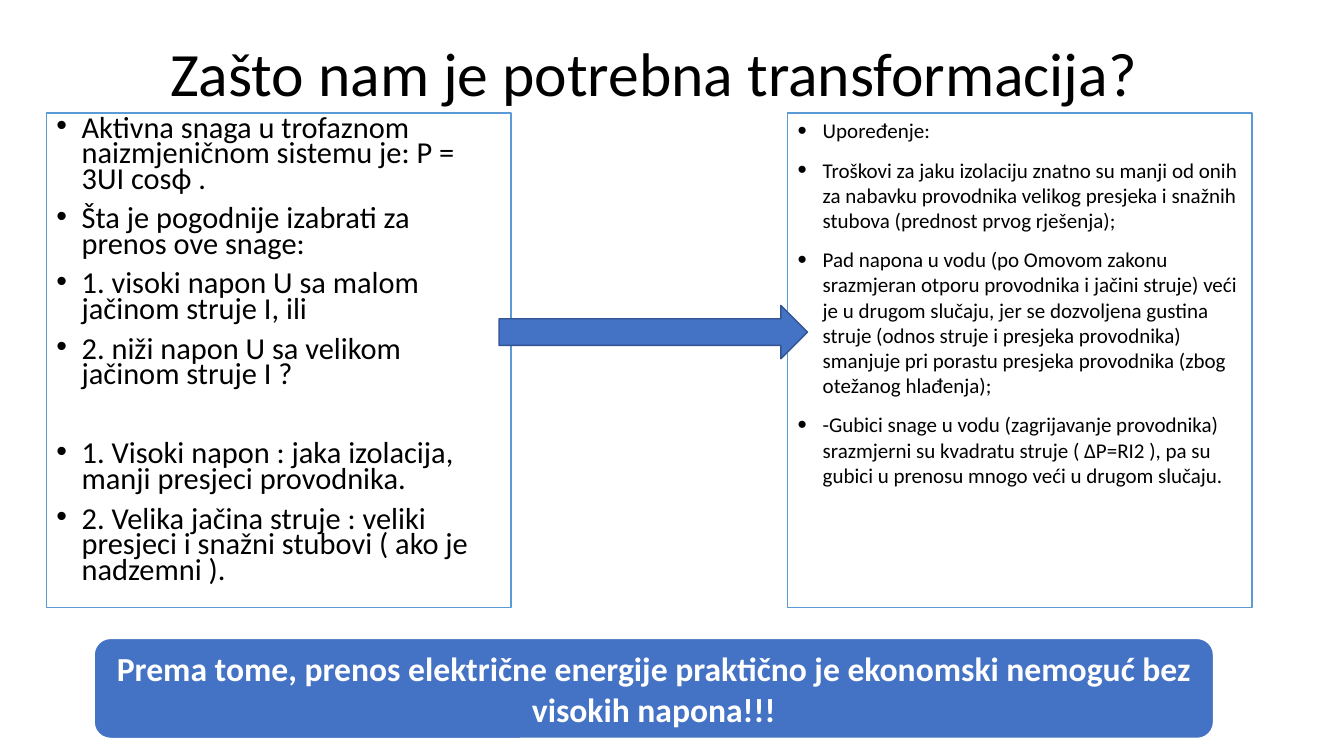
from lxml.etree import SubElement
from pptx import Presentation
from pptx.dml.color import RGBColor
from pptx.enum.shapes import MSO_SHAPE
from pptx.enum.text import MSO_ANCHOR, MSO_AUTO_SIZE, PP_ALIGN
from pptx.oxml.ns import qn
from pptx.util import Inches, Pt

# Content
TITLE = "Zašto nam je potrebna transformacija?"
QUESTIONS = [
    "Aktivna snaga u trofaznom naizmjeničnom sistemu je: P = 3UI cosϕ .",
    "Šta je pogodnije izabrati za prenos ove snage:",
    "1. visoki napon U sa malom jačinom struje I, ili",
    "2. niži napon U sa velikom jačinom struje I ?",
    "1. Visoki napon : jaka izolacija, manji presjeci provodnika.",
    "2. Velika jačina struje : veliki presjeci i snažni stubovi ( ako je nadzemni ).",
]
COMPARISON = [
    "Upoređenje:",
    "Troškovi za jaku izolaciju znatno su manji od onih za nabavku provodnika "
    "velikog presjeka i snažnih stubova (prednost prvog rješenja);",
    "Pad napona u vodu (po Omovom zakonu srazmjeran otporu provodnika i jačini struje) "
    "veći je u drugom slučaju, jer se dozvoljena gustina struje (odnos struje i presjeka "
    "provodnika) smanjuje pri porastu presjeka provodnika (zbog otežanog hlađenja);",
    "-Gubici snage u vodu (zagrijavanje provodnika) srazmjerni su kvadratu struje "
    "( ∆P=RI2 ), pa su gubici u prenosu mnogo veći u drugom slučaju.",
]
CONCLUSION = ("Prema tome, prenos električne energije praktično je ekonomski "
              "nemoguć bez visokih napona!!!")
ANSWERS_START = 4  # the answers stand apart from the questions
BLUE, DARK_BLUE, LIGHT_BLUE = "4472C4", "325491", "5B9BD5"
BLACK, WHITE = "000000", "FFFFFF"


def color(value):
    return RGBColor.from_string(value)


def place(shape, left, top, width, height):
    shape.left, shape.top = Inches(left), Inches(top)
    shape.width, shape.height = Inches(width), Inches(height)


def paint(shape, fill, line, weight):
    shape.fill.solid()
    shape.fill.fore_color.rgb = color(fill)
    shape.line.color.rgb = color(line)
    shape.line.width = Pt(weight)


def style(para, size, ink, bold=False):
    font = para.font
    font.name, font.size, font.bold = "Calibri", Pt(size), bold
    font.color.rgb = color(ink)


def add_bullet(para, percent):
    properties = para._p.get_or_add_pPr()
    properties.set("marL", str(Inches(0.25)))
    properties.set("indent", str(-Inches(0.25)))
    SubElement(properties, qn("a:buSzPct"), val=str(percent * 1000))
    SubElement(properties, qn("a:buFont"), typeface="Arial")
    SubElement(properties, qn("a:buChar"), char="•")


def fill_panel(panel, left, lines, size, spacing, percent, gaps):
    place(panel, left, 1.12, 4.61, 4.91)
    paint(panel, WHITE, LIGHT_BLUE, 1)
    frame = panel.text_frame
    frame.auto_size = MSO_AUTO_SIZE.NONE
    frame.vertical_anchor = MSO_ANCHOR.TOP
    for index, line in enumerate(lines):
        para = frame.paragraphs[0] if index == 0 else frame.add_paragraph()
        para.text = line
        add_bullet(para, percent)
        para.line_spacing = spacing
        para.space_before = Pt(gaps.get(index, 10))
        style(para, size, BLACK)


def add_block(page, kind, bounds, line, weight):
    block = page.shapes.add_shape(kind, *map(Inches, bounds))
    block.shadow.inherit = False
    paint(block, BLUE, line, weight)
    return block


deck = Presentation()
deck.slide_width, deck.slide_height = Inches(13.33), Inches(7.5)
page = deck.slides.add_slide(deck.slide_layouts[3])
title, questions, comparison = page.placeholders

# Title
place(title, 1.59, 0.26, 10.83, 0.99)
title.text_frame.text = TITLE
title.text_frame.auto_size = MSO_AUTO_SIZE.NONE
title.text_frame.vertical_anchor = MSO_ANCHOR.MIDDLE
heading = title.text_frame.paragraphs[0]
heading.alignment = PP_ALIGN.LEFT
heading.line_spacing = 0.9
style(heading, 44, BLACK)

# Two panels joined by a block arrow
fill_panel(questions, 0.46, QUESTIONS, 21.7, 0.7, 100, {0: 0, ANSWERS_START: 38.5})
fill_panel(comparison, 7.81, COMPARISON, 15, 1.0, 125, {0: 0})
add_block(page, MSO_SHAPE.RIGHT_ARROW, (4.95, 3.03, 3.06, 0.53), DARK_BLUE, 1)

# Conclusion
banner = add_block(page, MSO_SHAPE.ROUNDED_RECTANGLE, (0.93, 6.33, 11.11, 1), WHITE, 1.5)
banner.text_frame.text = CONCLUSION
banner.text_frame.word_wrap = True
banner.text_frame.vertical_anchor = MSO_ANCHOR.MIDDLE
verdict = banner.text_frame.paragraphs[0]
verdict.alignment = PP_ALIGN.CENTER
style(verdict, 24, WHITE, bold=True)

deck.save("out.pptx")
